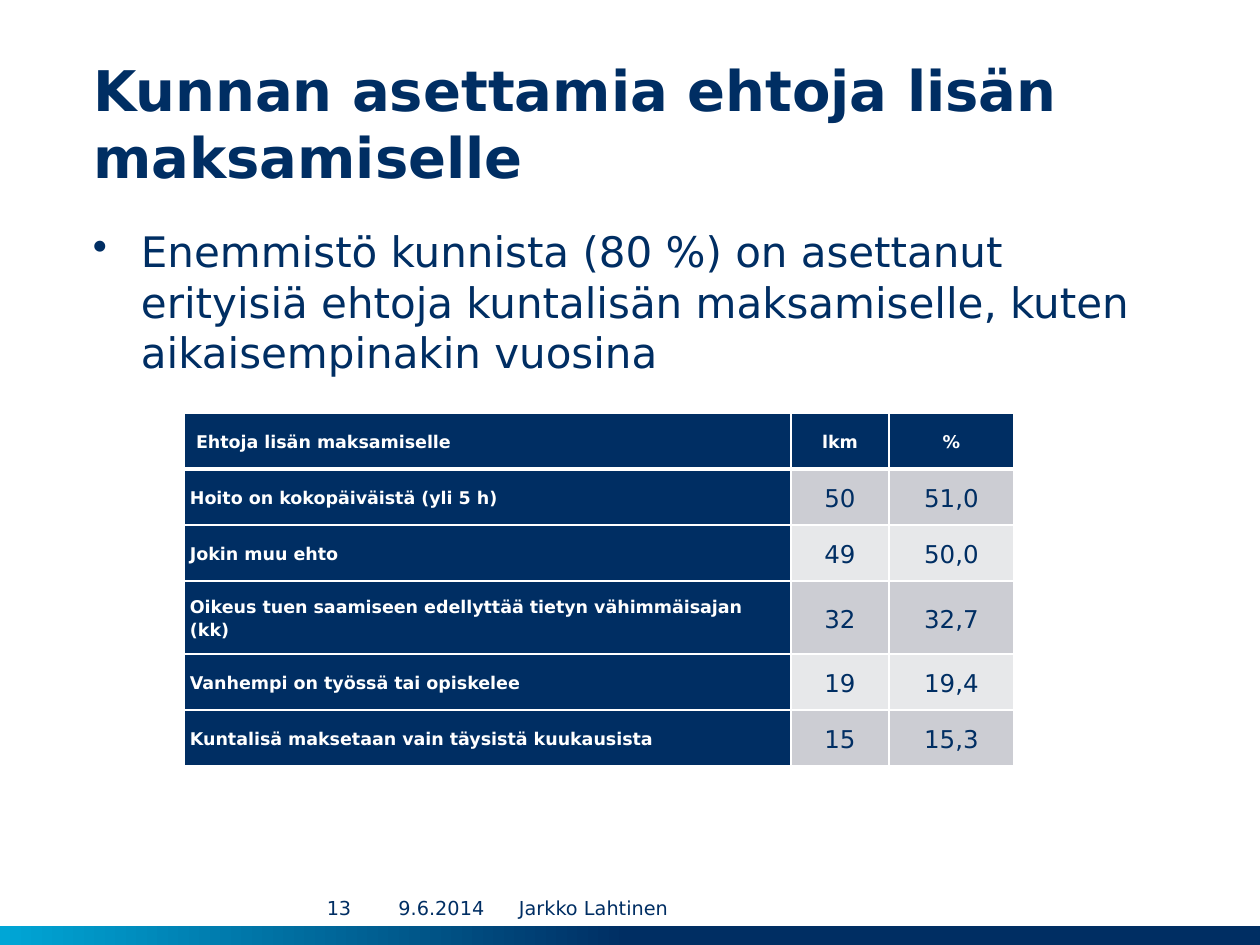
from lxml import etree
from pptx import Presentation
from pptx import util as u
from pptx.dml.color import RGBColor
from pptx.enum import shapes, text
from pptx.oxml import ns

PX = 914400 / 126
NAVY = RGBColor(0x00, 0x2E, 0x63)
CYAN = RGBColor(0x00, 0xA6, 0xD6)
WHITE = RGBColor(0xFF, 0xFF, 0xFF)
BANDS = (RGBColor(0xCC, 0xCD, 0xD3), RGBColor(0xE7, 0xE8, 0xEA))
FONT = "DejaVu Sans"
LEFT, CENTER = text.PP_ALIGN.LEFT, text.PP_ALIGN.CENTER
TOP, MIDDLE, BOTTOM = text.MSO_ANCHOR.TOP, text.MSO_ANCHOR.MIDDLE, text.MSO_ANCHOR.BOTTOM

TITLE = "Kunnan asettamia ehtoja lisän maksamiselle"
BODY = ("Enemmistö kunnista (80 %) on asettanut erityisiä ehtoja "
        "kuntalisän maksamiselle, kuten aikaisempinakin vuosina")
ROWS = (
    (" Ehtoja lisän maksamiselle", "lkm", "%"),
    ("Hoito on kokopäiväistä (yli 5 h)", "50", "51,0"),
    ("Jokin muu ehto", "49", "50,0"),
    ("Oikeus tuen saamiseen edellyttää tietyn vähimmäisajan (kk)", "32", "32,7"),
    ("Vanhempi on työssä tai opiskelee", "19", "19,4"),
    ("Kuntalisä maksetaan vain täysistä kuukausista", "15", "15,3"),
)
COLUMN_WIDTHS = (607, 98, 125)
ROW_HEIGHTS = (56, 56, 56, 73, 56, 56)
FOOTERS = (
    ("9.6.2014", (379, 890, 125, 36), CENTER),
    ("Jarkko Lahtinen", (519, 890, 427, 36), LEFT),
    ("13", (312, 890, 54, 36), CENTER),
)


def px(length):
    """Turn pixels into EMU."""
    return u.Emu(round(length * PX))


def write(frame, wording, size, color=NAVY, bold=False, align=LEFT, spacing=1.0, bullet=False):
    """Write one formatted paragraph into a text frame."""
    frame.word_wrap = True
    para = frame.paragraphs[0]
    if bullet:
        properties = para._p.get_or_add_pPr()
        properties.set("marL", str(px(48)))
        properties.set("indent", str(-px(48)))
        etree.SubElement(properties, ns.qn("a:buChar")).set("char", "•")
    para.alignment = align
    para.line_spacing = spacing
    span = para.add_run()
    span.text = wording
    span.font.name = FONT
    span.font.size = u.Pt(size)
    span.font.bold = bold
    span.font.color.rgb = color


def set_frame(frame, anchor, inset=0):
    """Set the anchor and the insets of a text frame."""
    frame.auto_size = text.MSO_AUTO_SIZE.NONE
    frame.vertical_anchor = anchor
    frame.margin_left = frame.margin_right = 0
    frame.margin_top = frame.margin_bottom = px(inset)


def add_text(page, wording, place, anchor=MIDDLE, inset=0, **style):
    """Add a text box with one paragraph."""
    box = page.shapes.add_textbox(*map(px, place))
    set_frame(box.text_frame, anchor, inset)
    write(box.text_frame, wording, **style)


def add_title(page):
    """Place and fill the title placeholder."""
    title = page.shapes.title
    title.left, title.top, title.width, title.height = map(px, (93, 38, 1072, 158))
    set_frame(title.text_frame, BOTTOM, inset=6)
    write(title.text_frame, TITLE, size=32, bold=True)


def add_bar(page):
    """Add the gradient bar along the bottom edge."""
    bar = page.shapes.add_shape(shapes.MSO_SHAPE.RECTANGLE, *map(px, (0, 926, 1260, 19)))
    bar.shadow.inherit = False
    bar.line.fill.background()
    bar.fill.gradient()
    bar.fill.gradient_angle = 180
    for stop, position, color in zip(bar.fill.gradient_stops, (0.5, 1), (NAVY, CYAN)):
        stop.position = position
        stop.color.rgb = color


def set_borders(cell, bottom=1, top=1):
    """Give a cell white borders, with widths in points."""
    properties = cell._tc.get_or_add_tcPr()
    for side, width in (("L", 1), ("R", 1), ("T", top), ("B", bottom)):
        line = etree.SubElement(properties, ns.qn(f"a:ln{side}"), w=str(u.Pt(width)))
        fill = etree.SubElement(line, ns.qn("a:solidFill"))
        etree.SubElement(fill, ns.qn("a:srgbClr"), val=str(WHITE))


def fill_cell(cell, wording, row, column):
    """Format one table cell by its row and column."""
    heading = row == 0 or column == 0
    set_borders(cell, bottom=3 if row == 0 else 1, top=3 if row == 1 else 1)
    cell.fill.solid()
    cell.fill.fore_color.rgb = NAVY if heading else BANDS[(row - 1) % 2]
    cell.vertical_anchor = MIDDLE
    cell.margin_left = cell.margin_right = px(6)
    cell.margin_top = cell.margin_bottom = 0
    write(cell.text_frame, wording, size=10 if heading else 14,
          color=WHITE if heading else NAVY, bold=heading,
          align=CENTER if column else LEFT, spacing=1.15)


def add_conditions(page):
    """Add the table of conditions."""
    place = (184, 413, sum(COLUMN_WIDTHS), sum(ROW_HEIGHTS))
    table = page.shapes.add_table(len(ROWS), len(COLUMN_WIDTHS), *map(px, place)).table
    table.first_col = True
    for column, width in zip(table.columns, COLUMN_WIDTHS):
        column.width = px(width)
    for row, height in zip(table.rows, ROW_HEIGHTS):
        row.height = px(height)
    for row, wordings in enumerate(ROWS):
        for column, wording in enumerate(wordings):
            fill_cell(table.cell(row, column), wording, row, column)


def main():
    """Build the slide and save the deck."""
    deck = Presentation()
    deck.slide_width, deck.slide_height = px(1260), px(945)
    page = deck.slides.add_slide(deck.slide_layouts[5])
    add_bar(page)
    add_title(page)
    add_text(page, BODY, (93, 220, 1072, 163), anchor=TOP, inset=6, size=24, bullet=True)
    for wording, place, align in FOOTERS:
        add_text(page, wording, place, size=11, align=align)
    add_conditions(page)
    deck.save("out.pptx")


if __name__ == "__main__":
    main()
